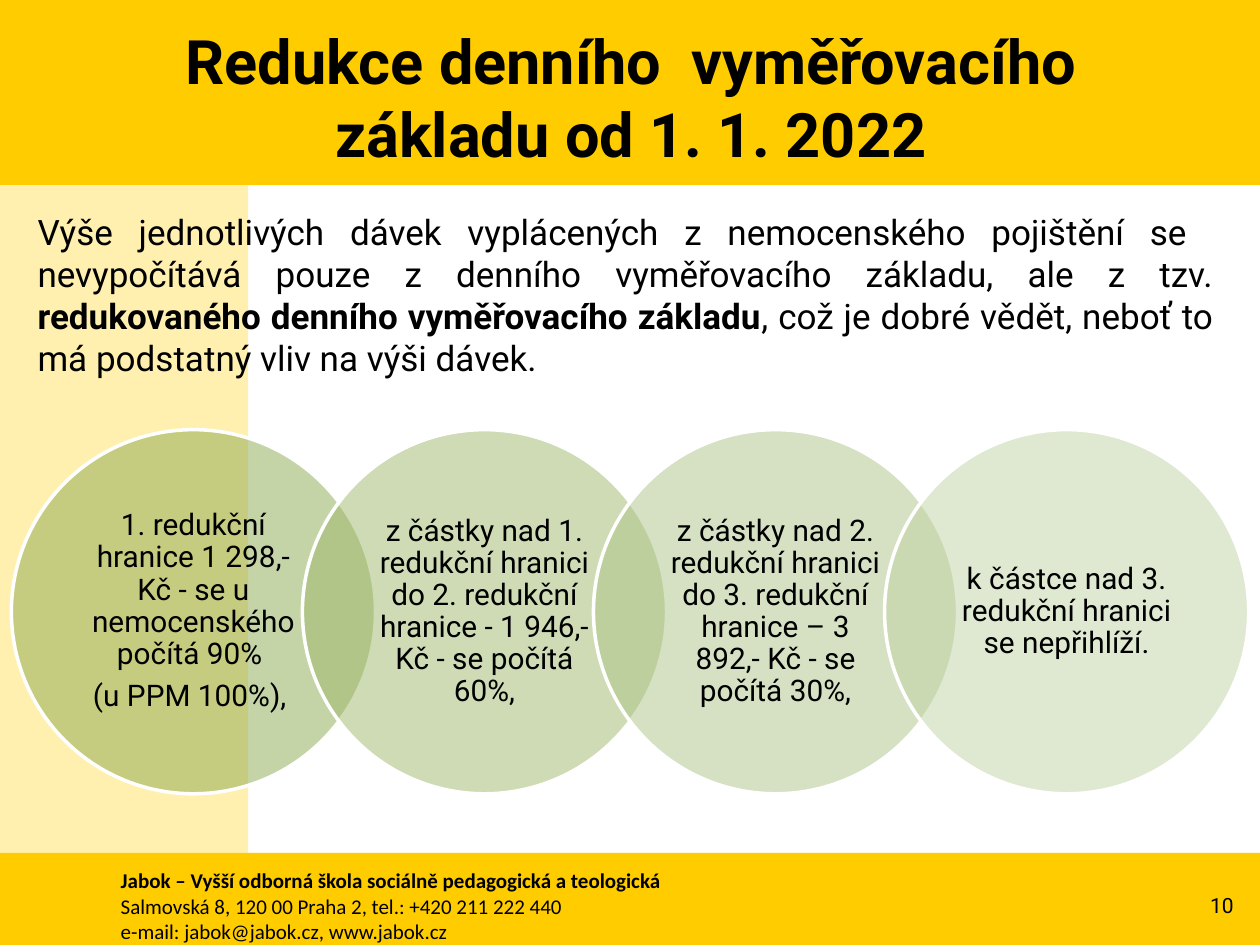
from dataclasses import dataclass

from lxml.etree import SubElement
from pptx import Presentation
from pptx.dml.color import RGBColor
from pptx.enum.shapes import MSO_SHAPE
from pptx.enum.text import MSO_ANCHOR, MSO_AUTO_SIZE, PP_ALIGN
from pptx.oxml.ns import qn
from pptx.shapes.autoshape import Shape
from pptx.slide import Slide
from pptx.text.text import TextFrame
from pptx.util import Emu, Pt

EMU_PER_PX = 9144
BLACK = "000000"
WHITE = "FFFFFF"
GOLD = "FFCC00"
CREAM = "FFF0AF"


@dataclass(frozen=True)
class Box:
    left: int
    top: int
    width: int
    height: int


@dataclass(frozen=True)
class Run:
    text: str
    bold: bool = False


@dataclass(frozen=True)
class Style:
    size: int
    font: str = "Roboto"
    align: PP_ALIGN = PP_ALIGN.LEFT
    line_spacing: float = 1.0
    space_after: int = 0


@dataclass(frozen=True)
class Circle:
    color: str
    paragraphs: tuple[str, ...]


BANDS = (
    (Box(0, 0, 1000, 147), GOLD),
    (Box(0, 147, 197, 530), CREAM),
    (Box(0, 677, 1000, 73), GOLD),
)
TITLE_STYLE = Style(35, align=PP_ALIGN.CENTER)
INTRO_STYLE = Style(20, align=PP_ALIGN.JUSTIFY)
CIRCLE_STYLE = Style(17, align=PP_ALIGN.CENTER, line_spacing=0.9, space_after=6)
CONTACT_STYLE = Style(12, "Calibri")
NUMBER_STYLE = Style(12, align=PP_ALIGN.RIGHT)

FIRST_LEFT = 9
CIRCLE_TOP = 341
DIAMETER = 289
STEP = 1158 // 5
LABEL_INSET = 42
LABEL_SIZE = DIAMETER - 2 * LABEL_INSET
CIRCLES = (
    Circle("8DAA51", (
        "1. redukční hranice 1 298,- Kč - se u nemocenského počítá 90% ",
        "(u PPM 100%), ",
    )),
    Circle("9EB86C", (
        "z částky nad 1. redukční hranici do 2. redukční hranice - 1 946,- Kč - se počítá 60%,",
    )),
    Circle("AFC589", (
        "z částky nad 2. redukční hranici do 3. redukční hranice – 3 892,- Kč - se počítá 30%,",
    )),
    Circle("C1D3A5", ("k částce nad 3. redukční hranici se nepřihlíží.",)),
)


def px(length: int) -> Emu:
    return Emu(length * EMU_PER_PX)


def rgb(value: str) -> RGBColor:
    return RGBColor.from_string(value)


def place(box: Box) -> tuple[Emu, Emu, Emu, Emu]:
    return px(box.left), px(box.top), px(box.width), px(box.height)


def write(frame: TextFrame, paragraphs: list[list[Run]], style: Style) -> None:
    frame.word_wrap = True
    frame.auto_size = MSO_AUTO_SIZE.NONE
    for index, runs in enumerate(paragraphs):
        paragraph = frame.paragraphs[0] if index == 0 else frame.add_paragraph()
        paragraph.alignment = style.align
        paragraph.line_spacing = style.line_spacing
        paragraph.space_before = Pt(0)
        paragraph.space_after = Pt(style.space_after)
        for item in runs:
            run = paragraph.add_run()
            run.text = item.text
            run.font.name = style.font
            run.font.size = Pt(style.size)
            run.font.bold = item.bold
            run.font.color.rgb = rgb(BLACK)


def add_text(slide: Slide, box: Box, paragraphs: list[list[Run]], style: Style,
             anchor: MSO_ANCHOR = MSO_ANCHOR.TOP) -> TextFrame:
    frame = slide.shapes.add_textbox(*place(box)).text_frame
    write(frame, paragraphs, style)
    frame.vertical_anchor = anchor
    return frame


def add_filled(slide: Slide, kind: MSO_SHAPE, box: Box, color: str) -> Shape:
    shape = slide.shapes.add_shape(kind, *place(box))
    shape.shadow.inherit = False
    shape.fill.solid()
    shape.fill.fore_color.rgb = rgb(color)
    shape.line.fill.background()
    return shape


def add_circle(slide: Slide, left: int, circle: Circle) -> None:
    outline = Box(left, CIRCLE_TOP, DIAMETER, DIAMETER)
    shape = add_filled(slide, MSO_SHAPE.OVAL, outline, circle.color)
    color = shape.element.spPr.find(qn("a:solidFill")).find(qn("a:srgbClr"))
    SubElement(color, qn("a:alpha")).set("val", "50000")
    shape.line.color.rgb = rgb(WHITE)
    shape.line.width = Pt(2)
    label = Box(left + LABEL_INSET, CIRCLE_TOP + LABEL_INSET, LABEL_SIZE, LABEL_SIZE)
    paragraphs = [[Run(text)] for text in circle.paragraphs]
    frame = add_text(slide, label, paragraphs, CIRCLE_STYLE, MSO_ANCHOR.MIDDLE)
    frame.margin_left = frame.margin_right = px(16)
    frame.margin_top = frame.margin_bottom = px(2)


def add_title(slide: Slide) -> None:
    title = slide.shapes.title
    title.left, title.top, title.width, title.height = place(Box(51, 14, 900, 125))
    write(title.text_frame,
          [[Run("Redukce denního  vyměřovacího základu od 1. 1. 2022", True)]], TITLE_STYLE)
    title.text_frame.vertical_anchor = MSO_ANCHOR.MIDDLE
    slide.shapes.element.append(title.element)


def main() -> None:
    presentation = Presentation()
    presentation.slide_width = px(1000)
    presentation.slide_height = px(750)
    slide = presentation.slides.add_slide(presentation.slide_layouts[5])
    for box, color in BANDS:
        add_filled(slide, MSO_SHAPE.RECTANGLE, box, color)
    add_text(slide, Box(86, 684, 819, 66), [
        [Run("Jabok – Vyšší odborná škola sociálně pedagogická a teologická", True)],
        [Run("Salmovská 8, 120 00 Praha 2, tel.: +420 211 222 440")],
        [Run("e-mail: jabok@jabok.cz, www.jabok.cz")],
    ], CONTACT_STYLE)
    add_text(slide, Box(926, 698, 63, 40), [[Run("10")]], NUMBER_STYLE, MSO_ANCHOR.MIDDLE)
    add_title(slide)
    for index, circle in enumerate(CIRCLES):
        add_circle(slide, FIRST_LEFT + index * STEP, circle)
    add_text(slide, Box(20, 162, 953, 145), [[
        Run("Výše jednotlivých dávek vyplácených z nemocenského pojištění se  "
            "nevypočítává pouze z denního vyměřovacího základu, ale z tzv. "),
        Run("redukovaného denního vyměřovacího základu", True),
        Run(", což je dobré vědět, neboť to má podstatný vliv na výši dávek."),
    ]], INTRO_STYLE)
    presentation.save("out.pptx")


if __name__ == "__main__":
    main()
